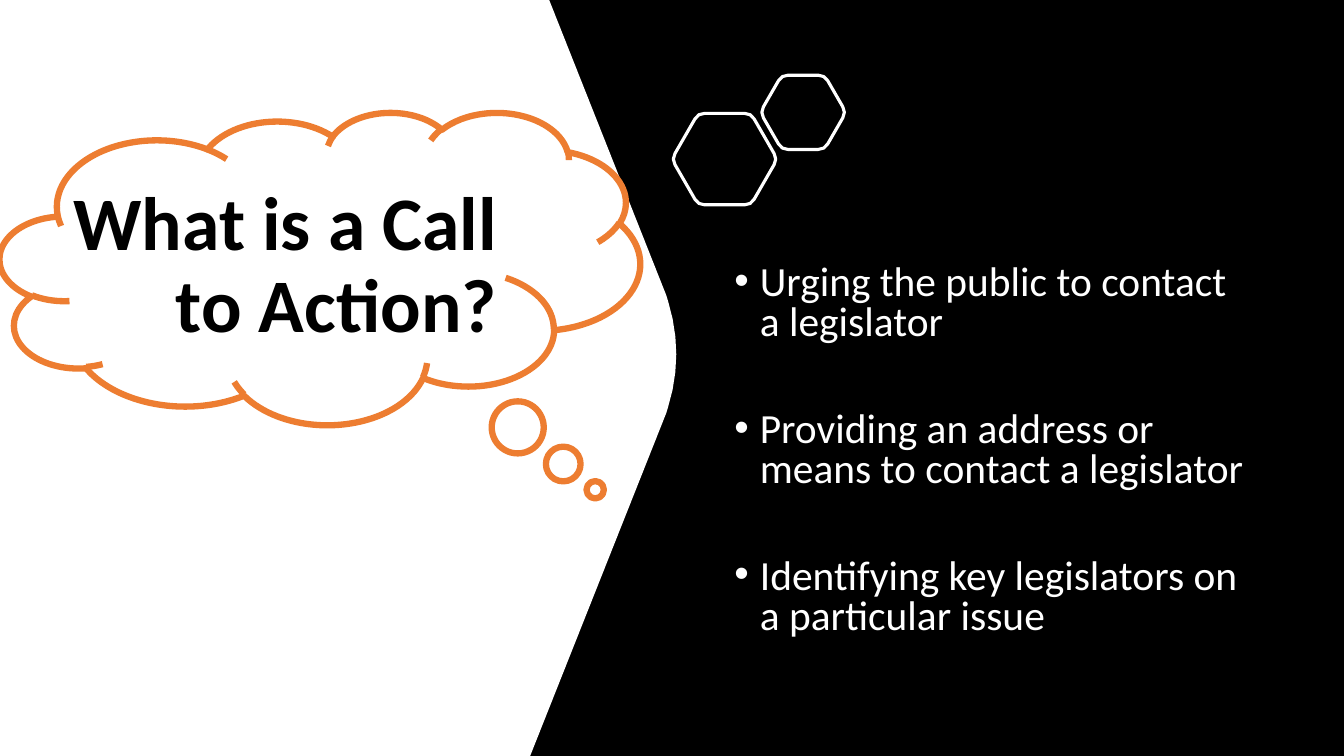
import math
import pptx
import pptx.util
import pptx.dml.color
import pptx.enum.shapes
import pptx.enum.text
import pptx.oxml.ns
import lxml.etree
from dataclasses import dataclass

Cm = pptx.util.Cm
Pt = pptx.util.Pt
Anchor = pptx.enum.text.MSO_ANCHOR
Align = pptx.enum.text.PP_ALIGN


@dataclass
class Theme:
    dark = pptx.dml.color.RGBColor.from_string("000000")
    light = pptx.dml.color.RGBColor.from_string("FFFFFF")
    accent = pptx.dml.color.RGBColor.from_string("ED7D31")
    font = "Calibri"
    mark = "Arial"
    head = 54
    body = 29.6


theme = Theme()


def write(frame, lines, size, color, bold=False, align=Align.LEFT,
          anchor=Anchor.TOP, pitch=1.0, gap=0, bullet=None):
    frame.word_wrap = True
    frame.auto_size = pptx.enum.text.MSO_AUTO_SIZE.NONE
    frame.vertical_anchor = anchor
    for i, line in enumerate(lines):
        para = frame.add_paragraph() if i else frame.paragraphs[0]
        para.alignment = align
        para.line_spacing = pitch
        para.space_before = Pt(gap if i else 0)
        run = para.add_run()
        run.text = line
        run.font.name = theme.font
        run.font.size = Pt(size)
        run.font.bold = bold
        run.font.color.rgb = color
        if bullet:
            props = para._p.get_or_add_pPr()
            props.set("marL", str(Cm(0.64)))
            props.set("indent", str(-Cm(0.64)))
            for tag, key, value in (("a:buFont", "typeface", theme.mark),
                                    ("a:buChar", "char", bullet)):
                lxml.etree.SubElement(props, pptx.oxml.ns.qn(tag)).set(key, value)


def outline(shapes, corners, steps):
    """Draw a closed outline; each corner is x, y and the length cut to round it."""
    dots = []
    for i, (x, y, cut) in enumerate(corners):
        if not cut:
            dots.append((Cm(x), Cm(y)))
            continue
        ends = []
        for px, py, _ in (corners[i - 1], corners[(i + 1) % len(corners)]):
            part = cut / math.dist((x, y), (px, py))
            ends.append((x + (px - x) * part, y + (py - y) * part))
        (ax, ay), (bx, by) = ends
        for step in range(steps + 1):
            t = step / steps
            a, c, b = (1 - t) ** 2, 2 * t * (1 - t), t ** 2
            dots.append((Cm(a * ax + c * x + b * bx), Cm(a * ay + c * y + b * by)))
    pen = shapes.build_freeform(*dots[0])
    pen.add_line_segments(dots[1:], close=True)
    shape = pen.convert_to_shape()
    shape.shadow.inherit = False
    return shape


# Slide
deck = pptx.Presentation()
deck.slide_width, deck.slide_height = Cm(33.87), Cm(19.05)
slide = deck.slides.add_slide(deck.slide_layouts[5])
slide.background.fill.solid()
slide.background.fill.fore_color.rgb = theme.dark

# White panel with a rounded point, kept behind the title
panel = outline(slide.shapes, [(0, 0, 0), (13.84, 0, 0), (16.79, 7.44, 0),
                               (17.25, 8.93, 1.4), (16.79, 10.41, 0),
                               (13.36, 19.05, 0), (0, 19.05, 0)], steps=6)
panel.fill.solid()
panel.fill.fore_color.rgb = theme.light
panel.line.fill.background()

# Title
title = slide.shapes.title
panel._element.addnext(title._element)
title.left, title.top, title.width, title.height = Cm(1.25), Cm(0.79), Cm(11.53), Cm(11.89)
write(title.text_frame, ["What is a Call to Action?"], theme.head, theme.dark,
      bold=True, align=Align.RIGHT, anchor=Anchor.MIDDLE, pitch=0.9)

# Hexagon pair
pair = slide.shapes.add_group_shape()
for x, y, size in ((18.26, 4.01, 1.33), (20.24, 2.83, 1.08)):
    angles = [math.radians(60 * i) for i in range(6)]
    hexagon = outline(pair.shapes, [(x + size * math.cos(a), y + size * math.sin(a), 0.16)
                                    for a in angles], steps=2)
    hexagon.fill.background()
    hexagon.line.color.rgb = theme.light
    hexagon.line.width = Pt(2.25)

# Bullet points
points = slide.shapes.add_textbox(Cm(18.26), Cm(6.68), Cm(13.49), Cm(10.06)).text_frame
points.margin_top = 0
write(points, ["Urging the public to contact a legislator",
               "Providing an address or means to contact a legislator",
               "Identifying key legislators on a particular issue"],
      theme.body, theme.light, pitch=0.8, gap=48, bullet="•")

# Thought cloud
cloud = slide.shapes.add_shape(pptx.enum.shapes.MSO_SHAPE.CLOUD_CALLOUT,
                               0, Cm(2.82), Cm(16.13), Cm(7.87))
cloud.adjustments[0], cloud.adjustments[1] = 0.43, 0.71
cloud.shadow.inherit = False
cloud.fill.background()
cloud.line.color.rgb = theme.accent
cloud.line.width = Pt(4.5)

deck.save("out.pptx")
